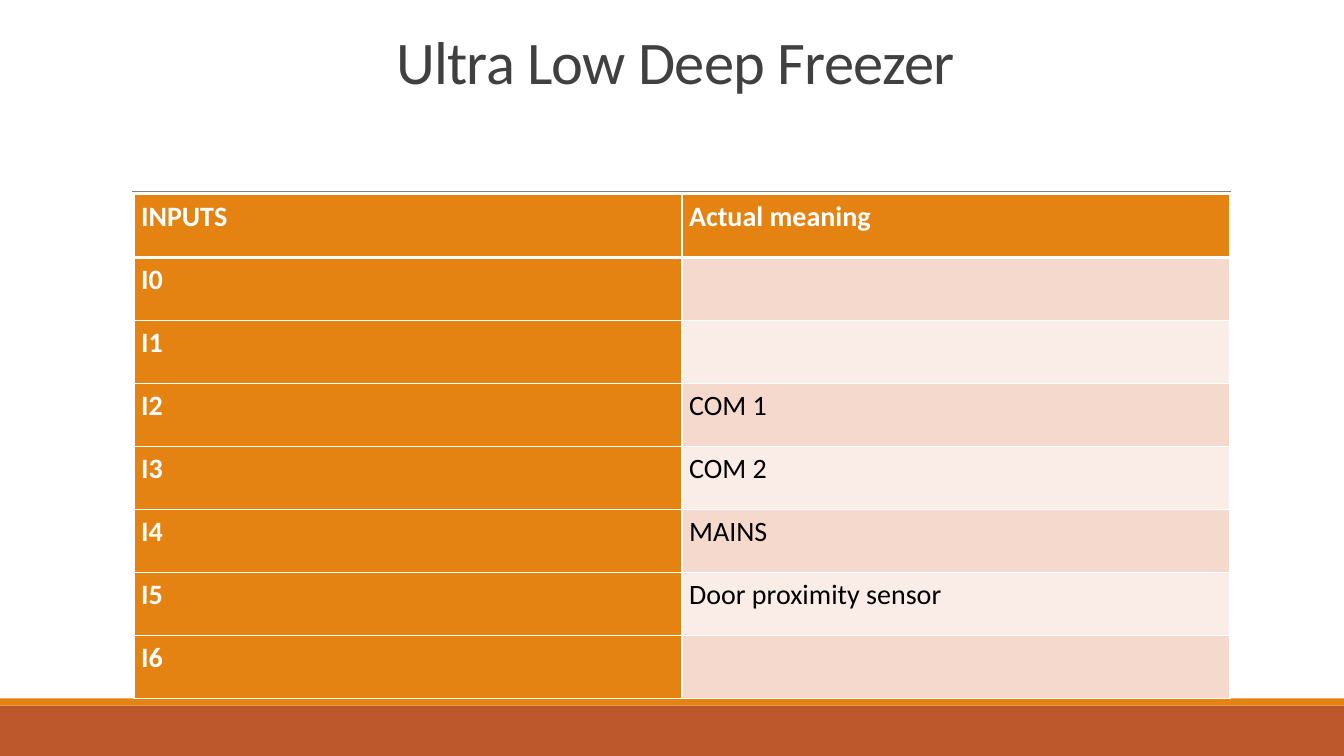
from dataclasses import dataclass

import pptx
import pptx.dml.color
import pptx.enum.shapes
import pptx.enum.text
import pptx.oxml
import pptx.oxml.ns
import pptx.util
from pptx.util import Inches

COLORS = {
    "orange": "E48312",
    "rust": "BD582C",
    "rule": "808080",
    "title": "404040",
    "white": "FFFFFF",
    "black": "000000",
    "band_dark": "F5D9CC",
    "band_light": "FAEDE7",
}
FONT = "Calibri"


@dataclass
class Band:
    top: float
    height: float
    color: str


@dataclass
class InputRow:
    name: str
    meaning: str = ""


FOOTER_BANDS = [Band(7, 0.5, "rust"), Band(6.93, 0.07, "orange")]
INPUT_ROWS = [
    InputRow("INPUTS", "Actual meaning"),
    InputRow("I0"),
    InputRow("I1"),
    InputRow("I2", "COM 1"),
    InputRow("I3", "COM 2"),
    InputRow("I4", "MAINS"),
    InputRow("I5", "Door proximity sensor"),
    InputRow("I6"),
]


def rgb(name: str) -> pptx.dml.color.RGBColor:
    return pptx.dml.color.RGBColor.from_string(COLORS[name])


def style_font(font, size: float, color: str, bold: bool = False) -> None:
    font.name = FONT
    font.size = pptx.util.Pt(size)
    font.bold = bold
    font.color.rgb = rgb(color)


def draw_band(slide, band: Band) -> None:
    shape = slide.shapes.add_shape(
        pptx.enum.shapes.MSO_SHAPE.RECTANGLE,
        0, Inches(band.top), Inches(13.33), Inches(band.height))
    shape.shadow.inherit = False
    shape.fill.solid()
    shape.fill.fore_color.rgb = rgb(band.color)
    shape.line.fill.background()


def draw_rule(slide) -> None:
    rule = slide.shapes.add_connector(
        pptx.enum.shapes.MSO_CONNECTOR.STRAIGHT,
        Inches(1.31), Inches(1.9), Inches(12.21), Inches(1.9))
    rule.line.color.rgb = rgb("rule")
    rule.line.width = pptx.util.Pt(0.5)
    properties = rule.element.find(pptx.oxml.ns.qn("p:spPr"))
    properties.append(pptx.oxml.parse_xml(
        f'<a:effectLst {pptx.oxml.ns.nsdecls("a")}/>'))


def draw_title(slide, text: str) -> None:
    box = slide.shapes.add_textbox(Inches(1.2), Inches(0.31), Inches(11), Inches(0.7))
    frame = box.text_frame
    frame.word_wrap = True
    frame.vertical_anchor = pptx.enum.text.MSO_ANCHOR.BOTTOM
    paragraph = frame.paragraphs[0]
    paragraph.alignment = pptx.enum.text.PP_ALIGN.CENTER
    paragraph.line_spacing = 0.85
    run = paragraph.add_run()
    run.text = text
    style_font(paragraph.font, 43.2, "title")
    run.font.size = paragraph.font.size
    run.font.element.set("spc", "-50") if hasattr(run.font, "element") else \
        run._r.get_or_add_rPr().set("spc", "-50")


def set_borders(cell, bottom_width: int) -> None:
    properties = cell._tc.get_or_add_tcPr()
    widths = {"lnL": 1, "lnR": 1, "lnT": 1, "lnB": bottom_width}
    for position, (side, width) in enumerate(widths.items()):
        properties.insert(position, pptx.oxml.parse_xml(
            f'<a:{side} {pptx.oxml.ns.nsdecls("a")} w="{pptx.util.Pt(width)}">'
            f'<a:solidFill><a:srgbClr val="{COLORS["white"]}"/></a:solidFill>'
            f'</a:{side}>'))


def fill_cell(cell, text: str, fill: str, is_heading: bool) -> None:
    cell.fill.solid()
    cell.fill.fore_color.rgb = rgb(fill)
    cell.margin_left = cell.margin_right = Inches(0.07)
    cell.margin_top = cell.margin_bottom = 0
    cell.text = text
    paragraph = cell.text_frame.paragraphs[0]
    paragraph.line_spacing = 1.15
    style_font(paragraph.font, 20, "white" if is_heading else "black", is_heading)


def draw_table(slide, input_rows: list[InputRow]) -> None:
    table = slide.shapes.add_table(
        len(input_rows), 2, Inches(1.33), Inches(1.93), Inches(10.87), Inches(5)).table
    for row_index, input_row in enumerate(input_rows):
        is_header = row_index == 0
        band = "band_dark" if row_index % 2 else "band_light"
        for column_index, text in enumerate((input_row.name, input_row.meaning)):
            cell = table.cell(row_index, column_index)
            is_heading = is_header or column_index == 0
            fill_cell(cell, text, "orange" if is_heading else band, is_heading)
            # The header's thick bottom edge is shared with the first row's top
            set_borders(cell, 3 if is_header else 1)


def main() -> None:
    presentation = pptx.Presentation()
    presentation.slide_width = Inches(13.33)
    presentation.slide_height = Inches(7.5)
    slide = presentation.slides.add_slide(presentation.slide_layouts[6])

    # Footer bands and the rule under the title
    for band in FOOTER_BANDS:
        draw_band(slide, band)
    draw_rule(slide)

    # Title and table of inputs
    draw_title(slide, "Ultra Low Deep Freezer")
    draw_table(slide, INPUT_ROWS)

    presentation.save("out.pptx")


if __name__ == "__main__":
    main()
